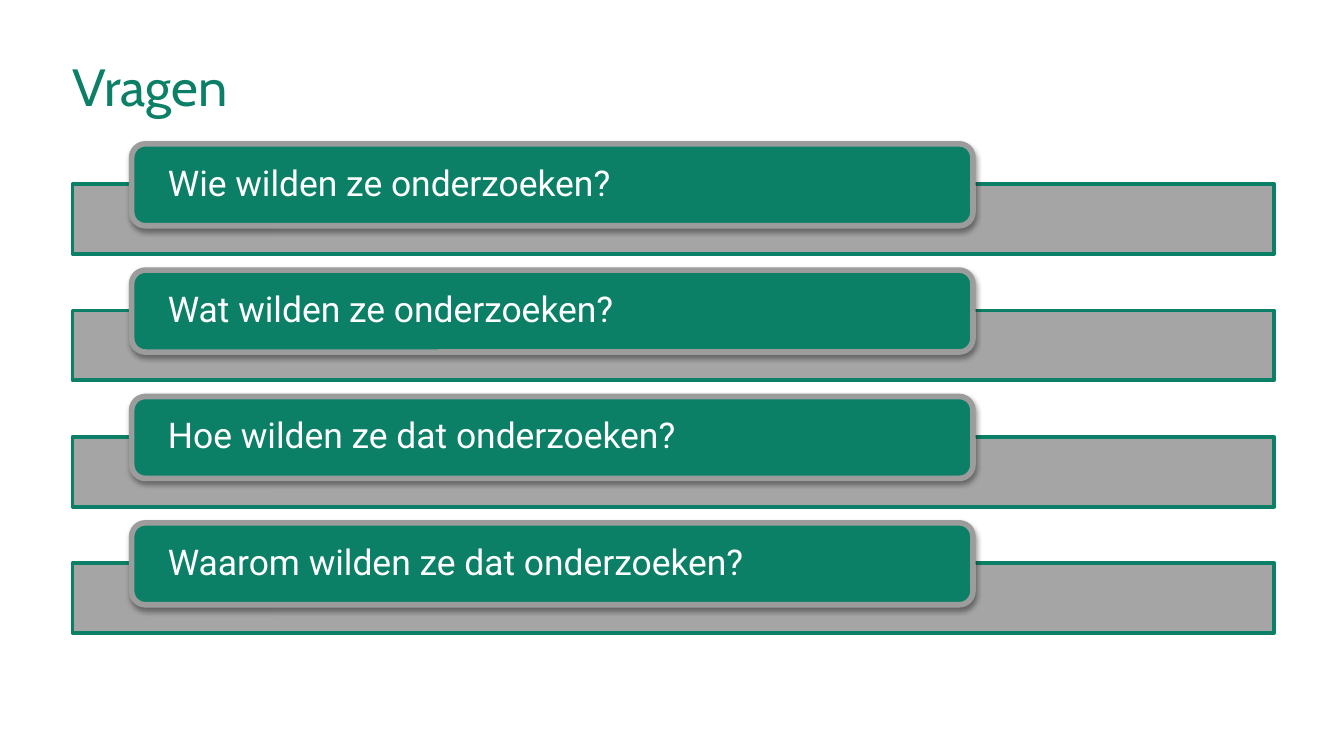
"""Build the slide "Vragen" with four question bars."""
from lxml.etree import SubElement
from pptx import Presentation
from pptx.dml.color import RGBColor
from pptx.enum.shapes import MSO_SHAPE
from pptx.enum.text import MSO_ANCHOR, PP_ALIGN
from pptx.oxml.ns import qn
from pptx.util import Inches, Pt

COLORS = {"green": "0C8066", "gray": "9C9C9C", "white": "FFFFFF", "black": "000000"}
QUESTIONS = [
    "Wie wilden ze onderzoeken?",
    "Wat wilden ze onderzoeken?",
    "Hoe wilden ze dat onderzoeken?",
    "Waarom wilden ze dat onderzoeken?",
]
ROW_STEP = 0.94


def write_text(shape, text, *, size, font, color, line_spacing, anchor, inset=0):
    frame = shape.text_frame
    frame.word_wrap = True
    frame.vertical_anchor = anchor
    frame.margin_left = frame.margin_right = Inches(inset)
    frame.margin_top = frame.margin_bottom = 0
    paragraph = frame.paragraphs[0]
    paragraph.alignment = PP_ALIGN.LEFT
    paragraph.line_spacing = line_spacing
    run = paragraph.add_run()
    run.text = text
    run.font.size = Pt(size)
    run.font.name = font
    run.font.color.rgb = RGBColor.from_string(COLORS[color])


def add_box(slide, kind, left, top, width, height, *, fill, line, line_width):
    shape = slide.shapes.add_shape(
        kind, Inches(left), Inches(top), Inches(width), Inches(height)
    )
    shape.fill.solid()
    shape.fill.fore_color.rgb = RGBColor.from_string(COLORS[fill])
    shape.line.color.rgb = RGBColor.from_string(COLORS[line])
    shape.line.width = Pt(line_width)
    shape.shadow.inherit = False
    return shape


presentation = Presentation()
presentation.slide_width = Inches(10)
presentation.slide_height = Inches(10 * 9 / 16)
slide = presentation.slides.add_slide(presentation.slide_layouts[6])

title = slide.shapes.add_textbox(Inches(0.54), Inches(0.43), Inches(8.94), Inches(0.63))
write_text(title, "Vragen", size=28, font="Cabin", color="green",
           line_spacing=Pt(32), anchor=MSO_ANCHOR.TOP)

for index, question in enumerate(QUESTIONS):
    top = 1.07 + index * ROW_STEP

    bar = add_box(slide, MSO_SHAPE.RECTANGLE, 0.54, top + 0.3, 8.94, 0.52,
                  fill="gray", line="green", line_width=2)
    bar_color = bar._element.spPr.find(qn("a:solidFill")).find(qn("a:srgbClr"))
    SubElement(bar_color, qn("a:alpha"), val="90000")

    label = add_box(slide, MSO_SHAPE.ROUNDED_RECTANGLE, 0.98, top, 6.26, 0.61,
                    fill="green", line="gray", line_width=3)
    effects = label._element.spPr.find(qn("a:effectLst"))
    shadow = SubElement(effects, qn("a:outerShdw"), blurRad=str(Pt(3.1)),
                        dist=str(Pt(1.6)), dir="5400000", rotWithShape="0")
    shadow_color = SubElement(shadow, qn("a:srgbClr"), val=COLORS["black"])
    SubElement(shadow_color, qn("a:alpha"), val="38000")
    write_text(label, question, size=19, font="Roboto", color="white",
               line_spacing=0.9, anchor=MSO_ANCHOR.MIDDLE, inset=0.24)

presentation.save("out.pptx")
